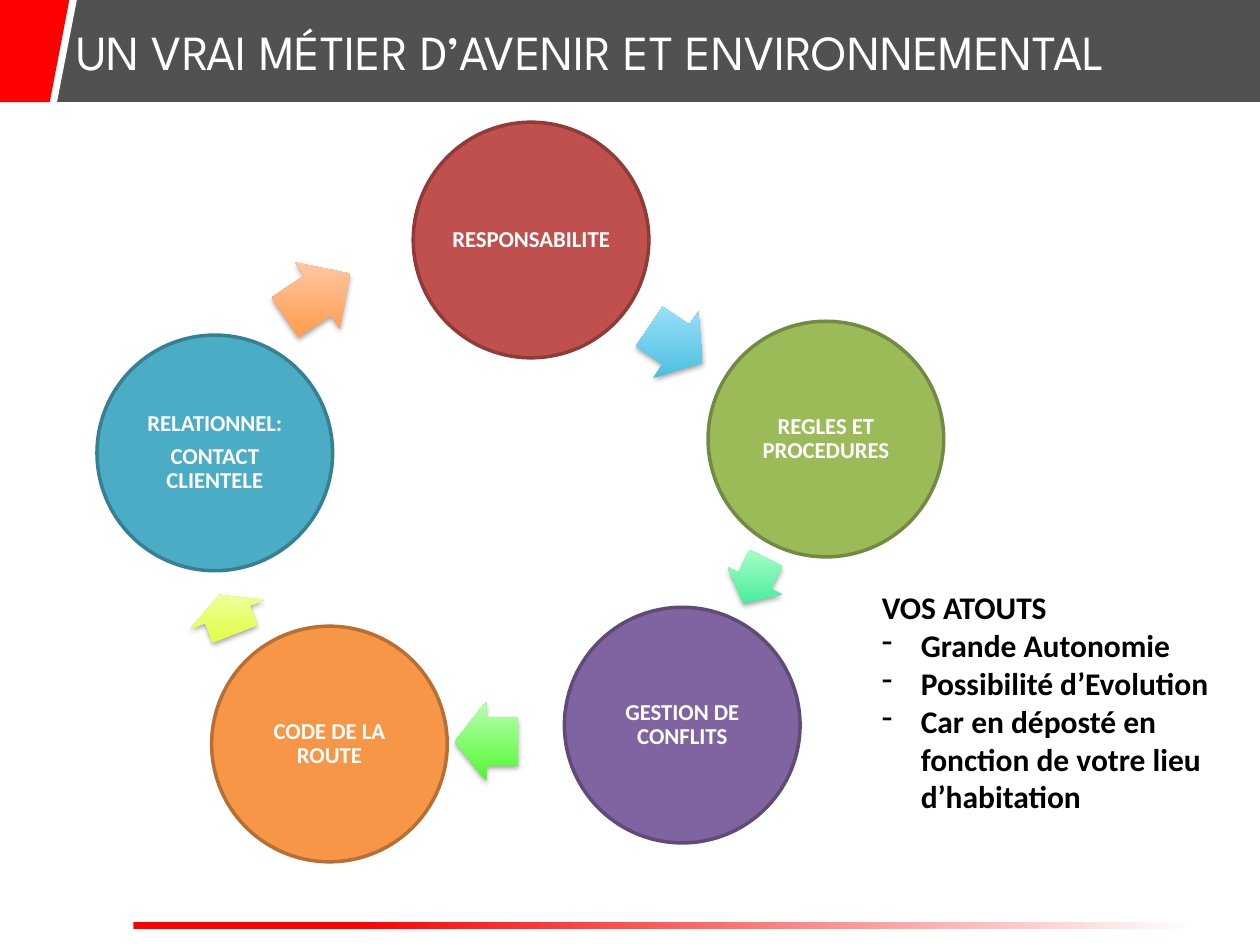
from dataclasses import dataclass

from lxml import etree
from pptx import Presentation
from pptx.dml.color import RGBColor
from pptx.enum.shapes import MSO_SHAPE
from pptx.enum.text import MSO_ANCHOR, MSO_AUTO_SIZE, PP_ALIGN
from pptx.oxml.ns import qn
from pptx.util import Inches, Pt

RECT, SLANT = MSO_SHAPE.RECTANGLE, MSO_SHAPE.PARALLELOGRAM
OVAL, ARROW = MSO_SHAPE.OVAL, MSO_SHAPE.RIGHT_ARROW
MIDDLE, TOP = MSO_ANCHOR.MIDDLE, MSO_ANCHOR.TOP
LEFT, CENTER = PP_ALIGN.LEFT, PP_ALIGN.CENTER
GROW = MSO_AUTO_SIZE.SHAPE_TO_FIT_TEXT
DIAMETER, BAND = 1.87, 0.81


@dataclass
class Circle:
    """A step of the cycle."""
    left: float
    top: float
    fill: str
    line: str
    lines: tuple[str, ...]


@dataclass
class Arrow:
    """A turned arrow between two steps."""
    left: float
    top: float
    width: float
    height: float
    angle: float
    dark: str
    light: str


CIRCLES = [
    Circle(3.28, 0.97, "C0504D", "8E3B39", ("RESPONSABILITE",)),
    Circle(5.62, 2.55, "9BBB59", "738A42", ("REGLES ET PROCEDURES",)),
    Circle(4.48, 4.82, "8064A2", "5F4A78", ("GESTION DE CONFLITS",)),
    Circle(1.68, 4.97, "F79646", "B76F34", ("CODE DE LA ROUTE",)),
    Circle(0.77, 2.66, "4BACC6", "377F92", ("RELATIONNEL:", "CONTACT CLIENTELE")),
]
ARROWS = [
    Arrow(5.11, 2.42, 0.51, 0.63, 34.1, "39B7D8", "A7E6FF"),
    Arrow(5.79, 4.37, 0.4, 0.48, 116.6, "33E992", "ADFFCD"),
    Arrow(3.61, 5.57, 0.5, 0.63, 179.8, "51F82F", "B9FFB2"),
    Arrow(1.64, 4.56, 0.33, 0.63, 248.5, "E2FF33", "F0FFB8"),
    Arrow(2.21, 2.03, 0.62, 0.63, 326, "FF953E", "FFD2BD"),
]
STRENGTHS = [
    "Grande Autonomie",
    "Possibilité d’Evolution",
    "Car en déposté en fonction de votre lieu d’habitation",
]


def rgb(value: str) -> RGBColor:
    """Turn a hex string into a colour."""
    return RGBColor.from_string(value)


def add_shape(s, kind, left: float, top: float, width: float, height: float,
              fill: str | None = None, adj: tuple[float, ...] = ()):
    """Add a preset shape without line or shadow."""
    sp = s.shapes.add_shape(kind, Inches(left), Inches(top), Inches(width), Inches(height))
    sp.shadow.inherit = False
    sp.line.fill.background()
    if fill:
        sp.fill.solid()
        sp.fill.fore_color.rgb = rgb(fill)
    for i, value in enumerate(adj):
        sp.adjustments[i] = value
    return sp


def set_gradient(sp, start: str, end: str, angle: float, first: float = 0) -> None:
    """Fill a shape with a two-colour gradient that does not turn with it."""
    sp.fill.gradient()
    sp.fill.gradient_angle = angle
    for stop, color, position in zip(sp.fill.gradient_stops, (start, end), (first, 1)):
        stop.color.rgb = rgb(color)
        stop.position = position
    sp._element.spPr.find(qn("a:gradFill")).set("rotWithShape", "0")


def set_alpha(parent, percent: int) -> None:
    """Give the colour element its opacity."""
    etree.SubElement(parent, qn("a:alpha"), val=str(percent * 1000))


def add_shadow(sp) -> None:
    """Add a soft shadow below a shape."""
    effects = sp._element.spPr.find(qn("a:effectLst"))
    shadow = etree.SubElement(effects, qn("a:outerShdw"), blurRad=str(Pt(3.1)),
                              dist=str(Pt(1.8)), dir="5400000", rotWithShape="0")
    set_alpha(etree.SubElement(shadow, qn("a:srgbClr"), val="000000"), 35)


def write(sp, lines, *, size: float, color: str, font: str = "Calibri", bold: bool = True,
          align=LEFT, anchor=TOP, inset: float | None = None, spacing: float = 1,
          after: float = 0, bullets_from: int | None = None) -> None:
    """Write paragraphs into a shape in one format."""
    tf = sp.text_frame
    tf.word_wrap = True
    tf.vertical_anchor = anchor
    if inset is not None:
        tf.margin_left = tf.margin_right = tf.margin_top = tf.margin_bottom = Inches(inset)
    for i, line in enumerate(lines):
        p = tf.add_paragraph() if i else tf.paragraphs[0]
        p.alignment, p.line_spacing, p.space_after = align, spacing, Pt(after)
        if bullets_from is not None and i >= bullets_from:
            pPr = p._p.get_or_add_pPr()
            pPr.set("marL", str(Inches(0.31)))
            pPr.set("indent", str(-Inches(0.31)))
            etree.SubElement(pPr, qn("a:buFontTx"))
            etree.SubElement(pPr, qn("a:buChar"), char="-")
        r = p.add_run()
        r.text = line
        r.font.name, r.font.size, r.font.bold = font, Pt(size), bold
        r.font.color.rgb = rgb(color)


def add_text(s, left: float, top: float, width: float, height: float, lines, **style):
    """Add a text box."""
    sp = s.shapes.add_textbox(Inches(left), Inches(top), Inches(width), Inches(height))
    write(sp, lines, **style)
    return sp


def draw_frame(s) -> None:
    """Draw the title band and the footer line."""
    band = add_shape(s, RECT, 0.34, 0, 9.66, BAND, "262626")
    set_alpha(band._element.spPr.find(qn("a:solidFill"))[0], 80)
    add_shape(s, SLANT, 0.26, 0, 0.35, BAND, "FFFFFF", (0.449,))
    add_shape(s, SLANT, -0.61, 0, 1.16, BAND, "FF0000", (0.191,))
    footer = add_shape(s, RECT, 1.06, 7.32, 8.43, 0.05)
    set_gradient(footer, "FF0000", "FFFFFF", 0, 0.21)


def draw_circle(s, c: Circle) -> None:
    """Draw a step with its label."""
    sp = add_shape(s, OVAL, c.left, c.top, DIAMETER, DIAMETER, c.fill)
    sp.line.color.rgb = rgb(c.line)
    sp.line.width = Pt(2)
    write(sp, c.lines, size=13, color="FFFFFF", align=CENTER, anchor=MIDDLE,
          inset=0.02, spacing=0.9, after=4.55)


def draw_arrow(s, a: Arrow) -> None:
    """Draw an arrow of the cycle."""
    sp = add_shape(s, ARROW, a.left, a.top, a.width, a.height, adj=(0.6, 0.5))
    sp.rotation = a.angle
    set_gradient(sp, a.dark, a.light, 90)
    add_shadow(sp)


def main() -> None:
    """Build the slide."""
    prs = Presentation()
    prs.slide_width, prs.slide_height = Inches(10), Inches(7.5)
    s = prs.slides.add_slide(prs.slide_layouts[6])
    draw_frame(s)
    add_text(s, 0.51, 0, 9.49, BAND, ["UN VRAI MÉTIER D’AVENIR ET ENVIRONNEMENTAL"],
             size=28, color="FFFFFF", font="League Spartan", bold=False, anchor=MIDDLE)
    for circle, arrow in zip(CIRCLES, ARROWS):
        draw_circle(s, circle)
        draw_arrow(s, arrow)
    strengths = add_text(s, 6.9, 4.62, 2.9, 2.22, ["VOS ATOUTS", *STRENGTHS],
                         size=18, color="000000", bullets_from=1)
    strengths.text_frame.auto_size = GROW
    prs.save("out.pptx")


if __name__ == "__main__":
    main()
